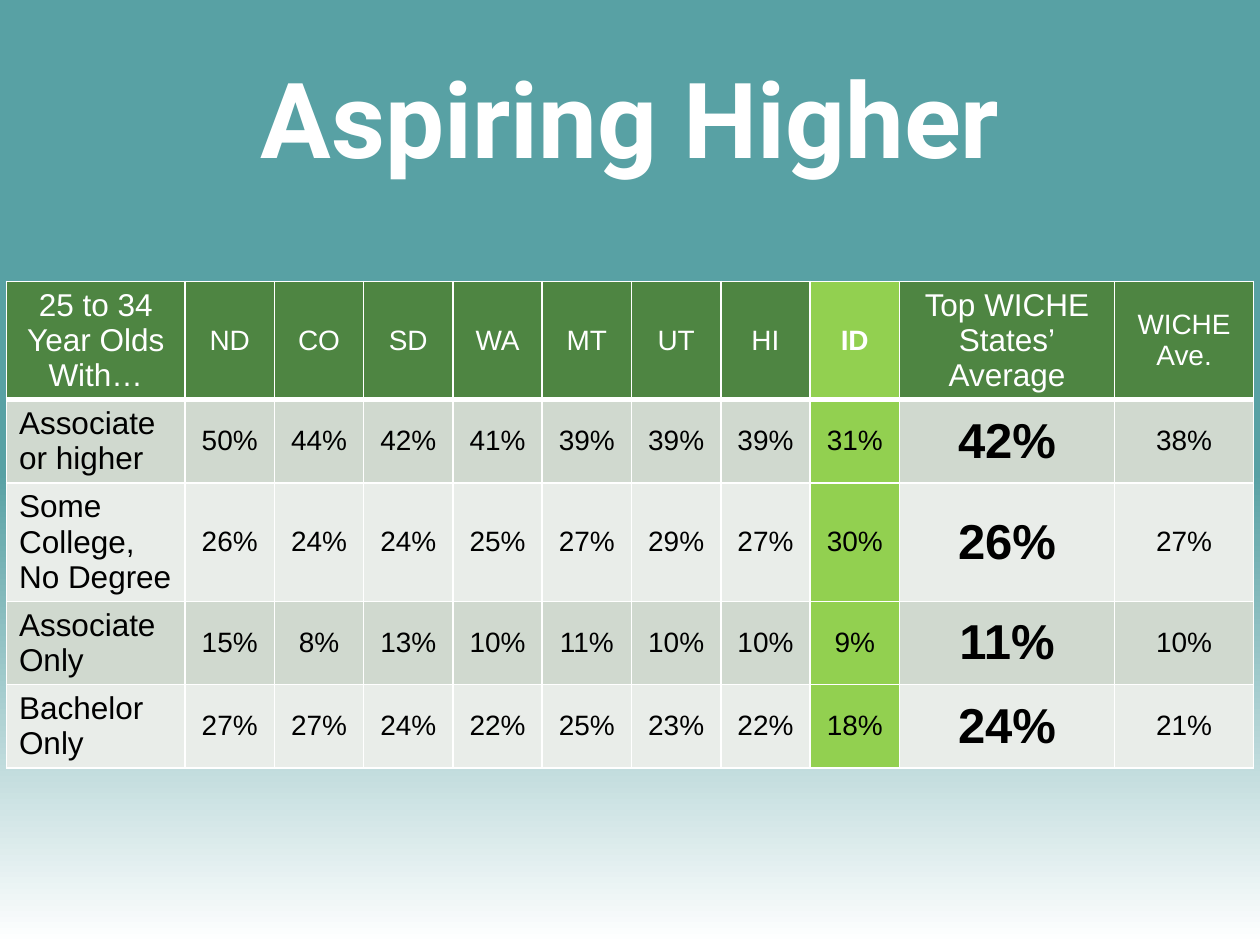
from lxml import etree
from pptx import Presentation
from pptx.dml.color import RGBColor
from pptx.enum import text
from pptx.oxml import ns
from pptx.util import Cm, Pt

# Content
TITLE = "Aspiring Higher"
HEADINGS = ["25 to 34 Year Olds With…", "ND", "CO", "SD", "WA", "MT", "UT", "HI", "ID",
            "Top WICHE\vStates’\vAverage", "WICHE\vAve."]
ATTAINMENT = [
    ("Associate or higher", [50, 44, 42, 41, 39, 39, 39, 31, 42, 38]),
    ("Some College, No Degree", [26, 24, 24, 25, 27, 29, 27, 30, 26, 27]),
    ("Associate Only", [15, 8, 13, 10, 11, 10, 10, 9, 11, 10]),
    ("Bachelor Only", [27, 27, 24, 22, 25, 23, 22, 18, 24, 21]),
]
LEVEL, IDAHO, TOP_AVERAGE = 0, 8, 9  # columns with their own look

# Style
WHITE = RGBColor(0xFF, 0xFF, 0xFF)
BLACK = RGBColor(0x00, 0x00, 0x00)
TEAL = RGBColor(0x58, 0xA1, 0xA4)
GREEN = RGBColor(0x4E, 0x85, 0x42)
LIME = RGBColor(0x92, 0xD0, 0x50)
BANDS = [RGBColor(0xD0, 0xD9, 0xCF), RGBColor(0xE9, 0xED, 0xE9)]
BACKDROP = [(0, WHITE, 100), (50, TEAL, 25), (100, TEAL, 100)]  # position, colour, opacity
COLUMN_WIDTHS = [Cm(3.6)] + [Cm(1.8)] * 8 + [Cm(4.34), Cm(2.8)]
ROW_HEIGHT = Cm(1.04)


def add_element(parent, tag, **attributes):
    element = etree.SubElement(parent, ns.qn(tag))
    for name, value in attributes.items():
        element.set(name, str(value))
    return element


def paint_backdrop(slide):
    fill = slide.background.fill
    fill.gradient()
    fill.gradient_angle = 90
    stops = slide.background._cSld.find(".//" + ns.qn("a:gsLst"))
    for stop in list(stops):
        stops.remove(stop)
    for position, color, opacity in BACKDROP:
        stop = add_element(stops, "a:gs", pos=position * 1000)
        swatch = add_element(stop, "a:srgbClr", val=color)
        if opacity < 100:
            add_element(swatch, "a:alpha", val=opacity * 1000)


def draw_borders(cell, bottom):
    properties = cell._tc.get_or_add_tcPr()
    for side, points in (("L", 1), ("R", 1), ("T", 1), ("B", bottom)):
        line = add_element(properties, "a:ln" + side, w=Pt(points))
        add_element(add_element(line, "a:solidFill"), "a:srgbClr", val=WHITE)


def format_cell(cell, row, column):
    header = row == 0
    draw_borders(cell, 3 if header else 1)
    cell.fill.solid()
    if column == IDAHO:
        cell.fill.fore_color.rgb = LIME
    else:
        cell.fill.fore_color.rgb = GREEN if header else BANDS[(row - 1) % 2]
    if column != LEVEL:
        cell.vertical_anchor = text.MSO_ANCHOR.MIDDLE

    paragraph = cell.text_frame.paragraphs[0]
    if header or column != LEVEL:
        paragraph.alignment = text.PP_ALIGN.CENTER
    font = paragraph.font
    font.name = "Arial"
    font.color.rgb = WHITE if header else BLACK
    font.bold = column == (IDAHO if header else TOP_AVERAGE)
    if column == TOP_AVERAGE and not header:
        font.size = Pt(28)
    else:
        font.size = Pt(18 if column in (LEVEL, TOP_AVERAGE) else 16)


def add_attainment_table(slide):
    rows = [HEADINGS] + [[level] + [f"{share}%" for share in shares]
                         for level, shares in ATTAINMENT]
    frame = slide.shapes.add_table(len(rows), len(HEADINGS), Cm(0.13), Cm(5.67),
                                   sum(COLUMN_WIDTHS), ROW_HEIGHT * len(rows))
    table = frame.table
    table.first_row = table.horz_banding = False
    for column, width in zip(table.columns, COLUMN_WIDTHS):
        column.width = width
    for r, values in enumerate(rows):
        table.rows[r].height = ROW_HEIGHT
        for c, value in enumerate(values):
            cell = table.cell(r, c)
            cell.text_frame.paragraphs[0].text = value
            format_cell(cell, r, c)
    frame.height = Cm(10.41)


def fill_title(slide):
    title = slide.shapes.title
    title.left, title.top, title.width, title.height = Cm(1.27), Cm(0.76), Cm(22.86), Cm(3.18)
    title.text_frame.text = TITLE
    title.text_frame.vertical_anchor = text.MSO_ANCHOR.MIDDLE
    paragraph = title.text_frame.paragraphs[0]
    paragraph.alignment = text.PP_ALIGN.CENTER
    font = paragraph.font
    font.name, font.size, font.bold = "Roboto", Pt(60), True
    font.color.rgb = WHITE


def main():
    deck = Presentation()
    deck.slide_width, deck.slide_height = Cm(25.4), Cm(19.05)
    slide = deck.slides.add_slide(deck.slide_layouts[5])
    paint_backdrop(slide)
    add_attainment_table(slide)
    fill_title(slide)
    deck.save("out.pptx")


if __name__ == "__main__":
    main()
